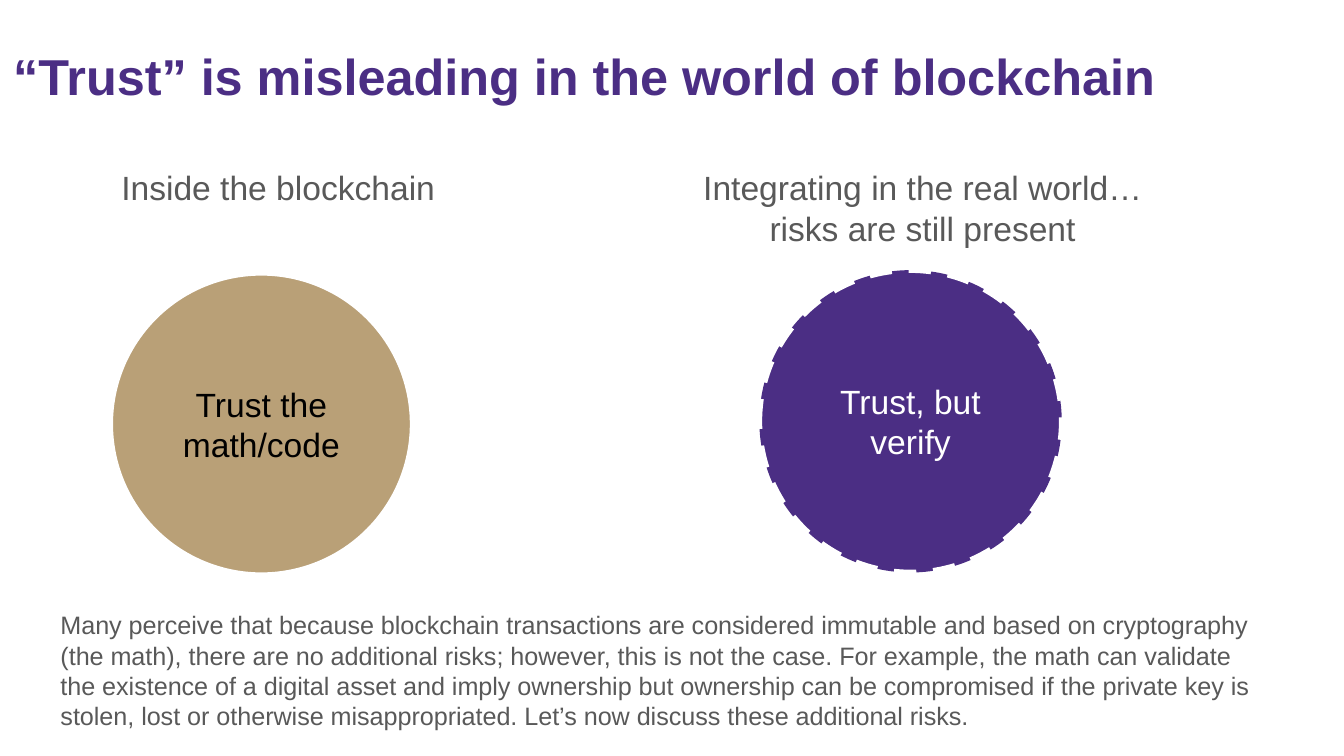
from pptx import Presentation
from pptx.dml.color import RGBColor
from pptx.enum import dml, shapes, text
from pptx.util import Pt

PURPLE, GOLD, GRAY, BLACK, WHITE = "4B2E84", "B9A077", "595959", "000000", "FFFFFF"
TITLE = "“Trust” is misleading in the world of blockchain"
HEADINGS = [
    ("Inside the blockchain", (32.4, 89.3, 233.3, 21.6)),
    ("Integrating in the real world… risks are still present", (357.1, 89.3, 274.3, 43.9)),
]
DIAMETER = 162
CIRCLES = [
    ("Trust the math/code", 59.04, 146.16, GOLD, BLACK, None),
    ("Trust, but verify", 406.8, 144.72, PURPLE, WHITE, dml.MSO_LINE.DASH),
]
EXPLANATION = (
    "Many perceive that because blockchain transactions are considered immutable "
    "and based on cryptography (the math), there are no additional risks; however, "
    "this is not the case. For example, the math can validate the existence of a "
    "digital asset and imply ownership but ownership can be compromised if the "
    "private key is stolen, lost or otherwise misappropriated. Let’s now discuss "
    "these additional risks."
)


def rgb(value):
    return RGBColor.from_string(value)


def write(shape, content, size=18, color=GRAY, bold=False, centered=True,
          anchor=text.MSO_ANCHOR.MIDDLE, inset=(0, 0)):
    frame = shape.text_frame
    frame.word_wrap = True
    frame.vertical_anchor = anchor
    frame.margin_left = frame.margin_right = Pt(inset[0])
    frame.margin_top = frame.margin_bottom = Pt(inset[1])
    paragraph = frame.paragraphs[0]
    paragraph.alignment = text.PP_ALIGN.CENTER if centered else text.PP_ALIGN.LEFT
    run = paragraph.add_run()
    run.text = content
    run.font.name = "Arial"
    run.font.size = Pt(size)
    run.font.bold = bold
    run.font.color.rgb = rgb(color)


def add_text(slide, content, box, **style):
    write(slide.shapes.add_textbox(*map(Pt, box)), content, **style)


def add_circle(slide, content, left, top, fill, color, dash):
    circle = slide.shapes.add_shape(
        shapes.MSO_SHAPE.OVAL, Pt(left), Pt(top), Pt(DIAMETER), Pt(DIAMETER))
    circle.shadow.inherit = False
    circle.fill.solid()
    circle.fill.fore_color.rgb = rgb(fill)
    circle.line.color.rgb = rgb(WHITE)
    circle.line.width = Pt(3)
    if dash:
        circle.line.dash_style = dash
    write(circle, content, color=color)


def main():
    presentation = Presentation()
    presentation.slide_width, presentation.slide_height = Pt(720), Pt(405)
    slide = presentation.slides.add_slide(presentation.slide_layouts[6])

    add_text(slide, TITLE, (0, 20.9, 661, 40.3), size=27, color=PURPLE, bold=True,
             centered=False, anchor=text.MSO_ANCHOR.TOP, inset=(7.2, 3.6))
    for circle in CIRCLES:
        add_circle(slide, *circle)
    for heading, box in HEADINGS:
        add_text(slide, heading, box)
    add_text(slide, EXPLANATION, (32.4, 326.2, 642.2, 65.5), size=13.5, centered=False)

    presentation.save("out.pptx")


if __name__ == "__main__":
    main()
